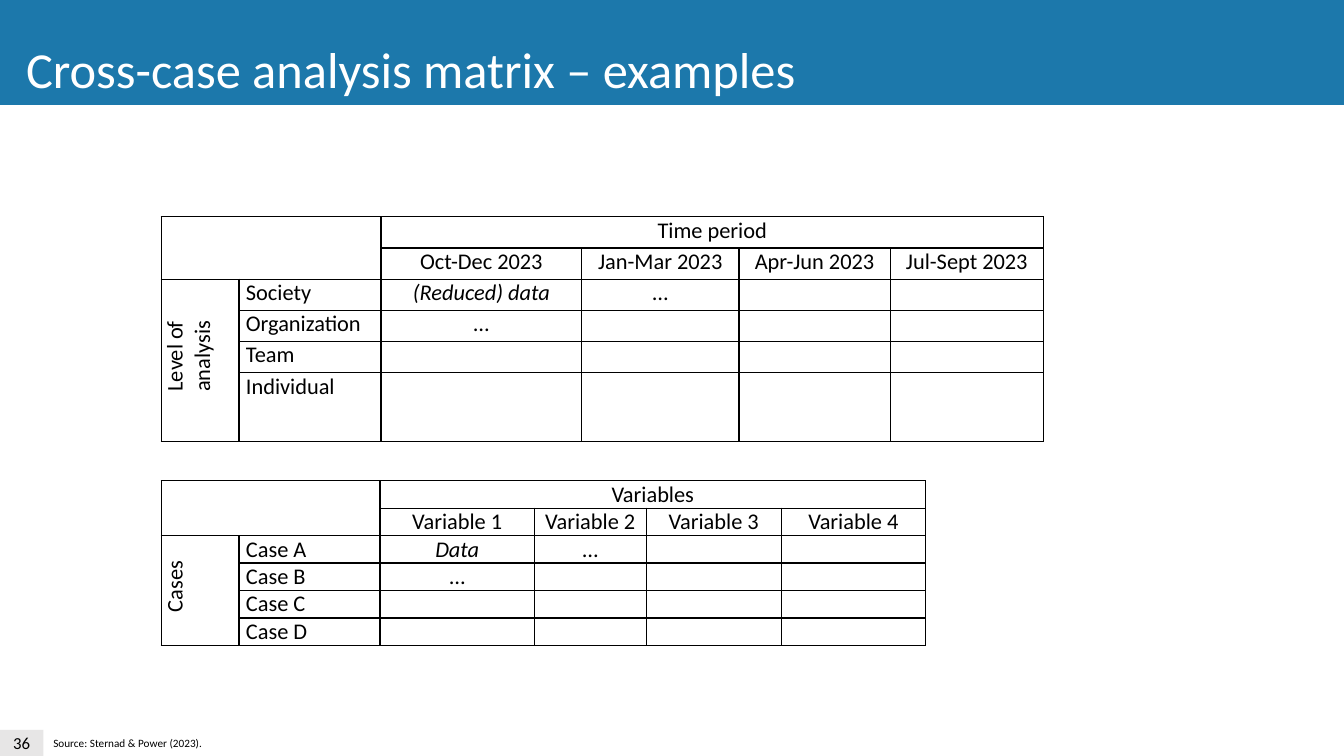
"""Build the cross-case analysis matrix slide with two example tables."""
import pptx
import pptx.dml.color
import pptx.enum.shapes
import pptx.enum.text
import pptx.util
from lxml import etree
from pptx.oxml.ns import qn

Inches = pptx.util.Inches
Pt = pptx.util.Pt
RGB = pptx.dml.color.RGBColor.from_string
ALIGN = pptx.enum.text.PP_ALIGN
ANCHOR = pptx.enum.text.MSO_ANCHOR

THEME = {
    "font": "Calibri", "ink": "000000", "white": "FFFFFF",
    "banner": "1C78AB", "badge": "E7E6E6",
    "title": 36, "table": 16, "number": 12, "source": 8,
}


def write(tf, text, size, color="ink", align=None, italic=None, after=None):
    """Put one formatted paragraph in a text frame."""
    p = tf.paragraphs[0]
    p.alignment = align
    if after is not None:
        p.space_after = Pt(after)
    if not text:
        etree.SubElement(p._p, qn("a:endParaRPr"), sz=str(THEME[size] * 100))
        return
    r = p.add_run()
    r.text = text
    r.font.name = THEME["font"]
    r.font.size = Pt(THEME[size])
    r.font.color.rgb = RGB(THEME[color])
    r.font.italic = italic


def border(cell):
    """Draw thin lines on all four sides of a cell."""
    tcPr = cell._tc.get_or_add_tcPr()
    for side in ("lnL", "lnR", "lnT", "lnB"):
        ln = etree.SubElement(tcPr, qn(f"a:{side}"), w=str(Pt(1)))
        fill = etree.SubElement(ln, qn("a:solidFill"))
        etree.SubElement(fill, qn("a:srgbClr"), val=THEME["ink"])


prs = pptx.Presentation()
prs.slide_width = Inches(13.33)
prs.slide_height = Inches(7.5)
s = prs.slides.add_slide(prs.slide_layouts[6])

for name, text, left, top, width, height in [
    ("badge", "36", 0, 7.24, 0.43, 0.26),
    ("banner", "", 0, -0.01, 13.34, 1.05),
]:
    sp = s.shapes.add_shape(pptx.enum.shapes.MSO_SHAPE.RECTANGLE,
                            Inches(left), Inches(top), Inches(width), Inches(height))
    sp.shadow.inherit = False
    sp.fill.solid()
    sp.fill.fore_color.rgb = RGB(THEME[name])
    sp.line.fill.background()
    if text:
        tf = sp.text_frame
        tf.margin_left = tf.margin_right = tf.margin_top = tf.margin_bottom = 0
        tf.vertical_anchor = ANCHOR.MIDDLE
        write(tf, text, "number", align=ALIGN.CENTER)

matrices = [
    {
        "top": 2.15,
        "cols": [0.77, 1.41, 1.99, 1.56, 1.5, 1.52],
        "rows": [0.31] * 5 + [0.68],
        "cells": [
            ["", "", "Time period"],
            ["", "", "Oct-Dec 2023", "Jan-Mar 2023", "Apr-Jun 2023", "Jul-Sept 2023"],
            ["Level of analysis", "Society", "(Reduced) data", "…"],
            ["", "Organization", "…"],
            ["", "Team"],
            ["", "Individual"],
        ],
    },
    {
        "top": 4.77,
        "cols": [0.77, 1.4, 1.53, 1.11, 1.34, 1.43],
        "rows": [0.27] * 6,
        "cells": [
            ["", "", "Variables"],
            ["", "", "Variable 1", "Variable 2", "Variable 3", "Variable 4"],
            ["Cases", "Case A", "Data", "…"],
            ["", "Case B", "…"],
            ["", "Case C"],
            ["", "Case D"],
        ],
    },
]

for matrix in matrices:
    cols, rows = matrix["cols"], matrix["rows"]
    table = s.shapes.add_table(len(rows), len(cols), Inches(1.6), Inches(matrix["top"]),
                               Inches(sum(cols)), Inches(sum(rows))).table
    table.first_row = table.horz_banding = False
    for col, width in zip(table.columns, cols):
        col.width = Inches(width)
    for row, height in zip(table.rows, rows):
        row.height = Inches(height)
    for i, texts in enumerate(matrix["cells"]):
        for j in range(len(cols)):
            cell = table.cell(i, j)
            cell.margin_left = cell.margin_right = Inches(0.07)
            cell.margin_top = cell.margin_bottom = 0
            border(cell)
            cell.fill.background()
            write(cell.text_frame, texts[j] if j < len(texts) else "", "table",
                  align=ALIGN.JUSTIFY if j == 1 else ALIGN.CENTER,
                  italic=(i, j) == (2, 2), after=6)
    table.cell(0, 0).merge(table.cell(1, 1))
    table.cell(0, 2).merge(table.cell(0, 5))
    side = table.cell(2, 0)
    side.merge(table.cell(5, 0))
    side._tc.tcPr.set("vert", "vert270")
    side.text_frame.paragraphs[0]._p.get_or_add_pPr().set("marL", str(Inches(0.08)))

for text, size, color, left, top, width, height in [
    ("Cross-case analysis matrix – examples", "title", "white", 0.16, 0.33, 8.02, 0.71),
    ("Source: Sternad & Power (2023).", "source", "ink", 0.43, 7.26, 1.69, 0.24),
]:
    tf = s.shapes.add_textbox(Inches(left), Inches(top), Inches(width), Inches(height)).text_frame
    tf.word_wrap = False
    tf.auto_size = pptx.enum.text.MSO_AUTO_SIZE.SHAPE_TO_FIT_TEXT
    write(tf, text, size, color)

prs.save("out.pptx")
